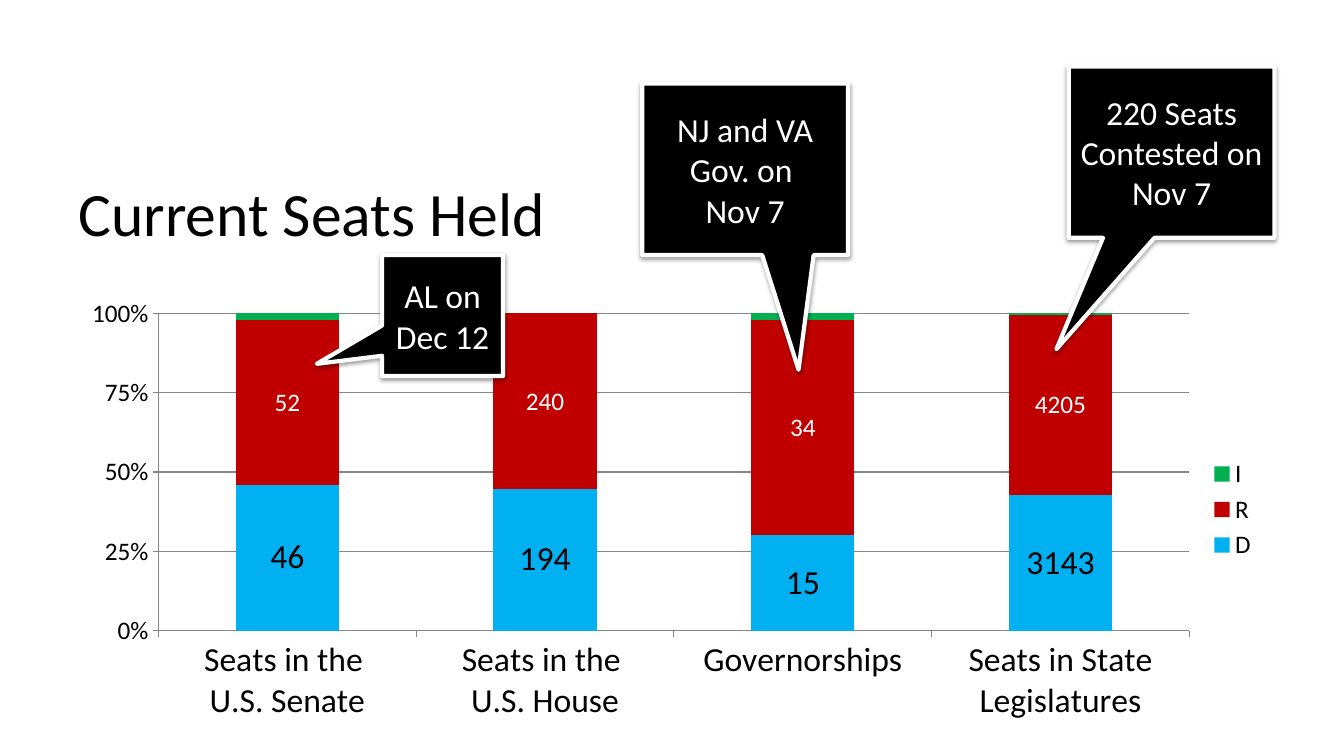
from dataclasses import dataclass
from lxml import etree
from pptx import Presentation
from pptx import util as u
from pptx.chart.data import CategoryChartData
from pptx.dml.color import RGBColor
from pptx.enum import chart as ch, shapes, text
from pptx.oxml import parse_xml
from pptx.oxml.ns import nsdecls, qn

# Content
TITLE = "Current Seats Held"
CATS = ["Seats in the \nU.S. Senate", "Seats in the \nU.S. House",
        "Governorships", "Seats in State Legislatures"]
# name, values, fill, label size, label colour
SERIES = [
    ("D", (46, 194, 15, 3143), "00B0F0", 24, "000000"),
    ("R", (52, 240, 34, 4205), "C00000", 18, "FFFFFF"),
    ("I", (2, 0, 1, 26), "00B050", None, None),
]
# text, left, top, width, height, pointer offset as shares of the box
NOTES = [
    ("220 Seats Contested on Nov 7", 10.6, 0.66, 2.04, 1.7, (-0.56, 1.15)),
    ("NJ and VA Gov. on \vNov 7", 6.37, 0.83, 2.04, 1.7, (0.26, 1.17)),
    ("AL on Dec 12", 3.79, 2.53, 1.2, 1.2, (-1.04, 0.4)),
]


@dataclass(frozen=True)
class Theme:
    font: str = "Calibri"
    ink: str = "000000"
    paper: str = "FFFFFF"
    grid: str = "868686"
    title: int = 44
    body: int = 24
    small: int = 18


T = Theme()
WIDE, HIGH = 13.33, 7.5
LEFT, SPLIT = 0.68, 2.87  # shared left edge; title meets chart
PLOT = dict(x=0.075, y=0.055, w=0.86, h=0.72)  # shares of the chart


def rgb(code):
    return RGBColor.from_string(code)


def style(font, size, color=T.ink):
    font.name, font.size, font.bold = T.font, u.Pt(size), False
    font.color.rgb = rgb(color)


def write(shape, words, size, color=T.ink, align=None, space=None):
    frame = shape.text_frame
    frame.word_wrap = True
    frame.vertical_anchor = text.MSO_ANCHOR.MIDDLE
    para = frame.paragraphs[0]
    para.text = words
    para.alignment, para.line_spacing = align, space
    for run in para.runs:
        style(run.font, size, color)


def shade(shape):
    shape.shadow.inherit = False
    glow = shape._element.spPr.find(qn("a:effectLst"))
    glow.append(parse_xml(
        f'<a:outerShdw {nsdecls("a")} blurRad="{u.Pt(3.1)}" '
        f'dist="{u.Pt(1.6)}" dir="5400000" rotWithShape="0">'
        f'<a:srgbClr val="{T.ink}"><a:alpha val="38000"/></a:srgbClr>'
        '</a:outerShdw>'))


def callout(slide, words, x, y, w, h, tip):
    box = slide.shapes.add_shape(
        shapes.MSO_SHAPE.RECTANGULAR_CALLOUT, *map(u.Inches, (x, y, w, h)))
    for i, share in enumerate(tip):
        box.adjustments[i] = share
    box.fill.solid()
    box.fill.fore_color.rgb = rgb(T.ink)
    box.line.color.rgb = rgb(T.paper)
    box.line.width = u.Pt(3)
    shade(box)
    write(box, words, T.body, T.paper, text.PP_ALIGN.CENTER)


def place(chart):
    area = chart._chartSpace.chart.plotArea
    old = area.find(qn("c:layout"))
    if old is not None:
        area.remove(old)
    layout = etree.Element(qn("c:layout"))
    manual = etree.SubElement(layout, qn("c:manualLayout"))
    rules = dict(layoutTarget="inner", xMode="edge", yMode="edge", **PLOT)
    for tag, val in rules.items():
        etree.SubElement(manual, qn("c:" + tag)).set("val", str(val))
    area.insert(0, layout)


def draw(slide):
    data = CategoryChartData()
    data.categories = CATS
    for name, vals, *_ in SERIES:
        data.add_series(name, vals)
    chart = slide.shapes.add_chart(
        ch.XL_CHART_TYPE.COLUMN_STACKED_100,
        *map(u.Inches, (LEFT, SPLIT, 11.89, 4.37)), data).chart
    style(chart.font, T.small)
    chart.has_title = False
    place(chart)

    # Legend
    chart.has_legend = True
    chart.legend.position = ch.XL_LEGEND_POSITION.RIGHT
    chart.legend.include_in_layout = False
    style(chart.legend.font, T.small)

    # Axes
    vals, cats = chart.value_axis, chart.category_axis
    vals.minimum_scale, vals.maximum_scale, vals.major_unit = 0, 1, 0.25
    vals.tick_labels.number_format = "0%"
    vals.tick_labels.number_format_is_linked = False
    vals.has_major_gridlines = True
    vals.major_gridlines.format.line.color.rgb = rgb(T.grid)
    for axis, size in ((vals, T.small), (cats, T.body)):
        axis.major_tick_mark = ch.XL_TICK_MARK.OUTSIDE
        axis.format.line.color.rgb = rgb(T.grid)
        style(axis.tick_labels.font, size)

    # Columns
    plot = chart.plots[0]
    plot.gap_width, plot.overlap, plot.vary_by_categories = 150, 100, False
    for bars, (_, _, fill, size, color) in zip(plot.series, SERIES):
        bars.format.fill.solid()
        bars.format.fill.fore_color.rgb = rgb(fill)
        if size:
            tags = bars.data_labels
            tags.show_value = True
            tags.position = ch.XL_LABEL_POSITION.CENTER
            style(tags.font, size, color)


def main():
    deck = Presentation()
    deck.slide_width, deck.slide_height = u.Inches(WIDE), u.Inches(HIGH)
    slide = deck.slides.add_slide(deck.slide_layouts[6])
    head = slide.shapes.add_textbox(
        *map(u.Inches, (LEFT, SPLIT - 1.45, 10.41, 1.45)))
    write(head, TITLE, T.title, space=0.9)
    draw(slide)
    for note in NOTES:
        callout(slide, *note)
    deck.save("out.pptx")


if __name__ == "__main__":
    main()
